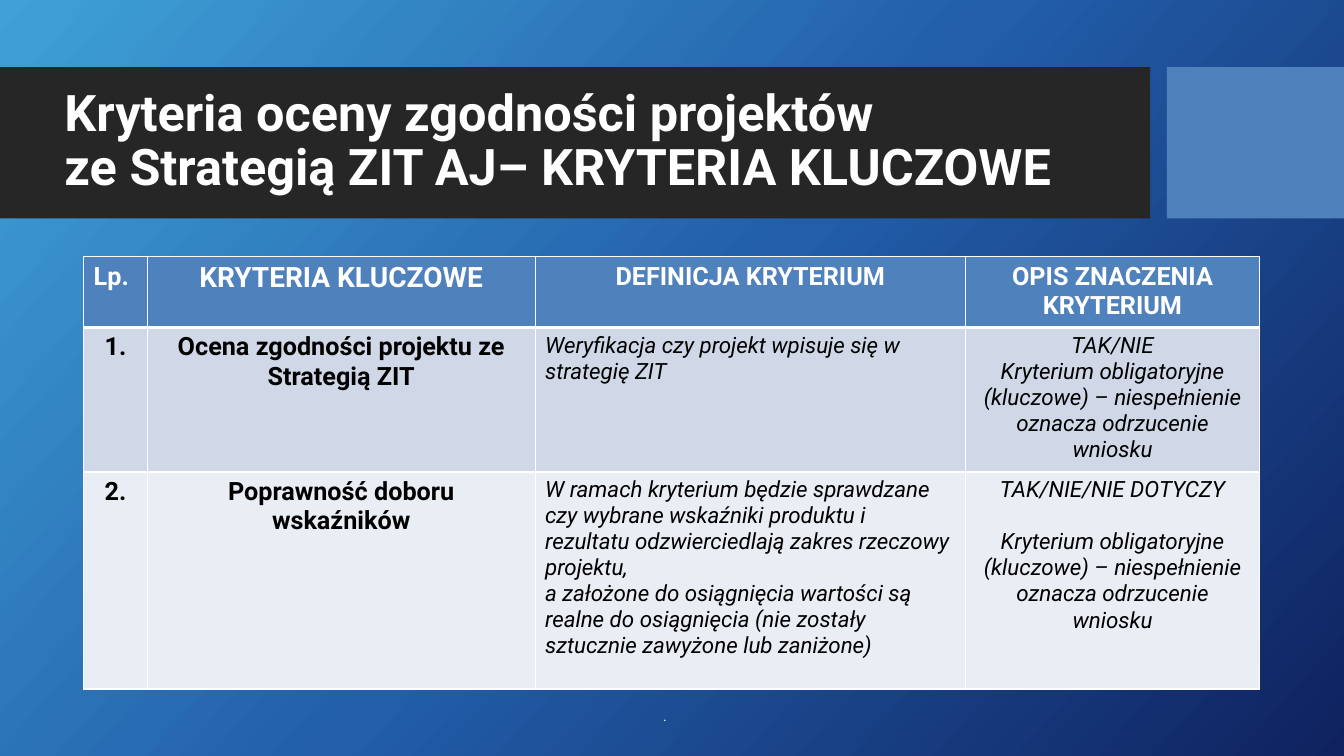
from copy import deepcopy
from dataclasses import dataclass

from lxml.etree import SubElement
from pptx import Presentation
from pptx.dml.color import RGBColor as RGB
from pptx.enum.shapes import MSO_SHAPE as SHAPE
from pptx.enum.text import MSO_ANCHOR as ANCHOR, PP_ALIGN as ALIGN
from pptx.oxml.ns import qn
from pptx.util import Pt


@dataclass(frozen=True)
class Theme:
    font: str = "Roboto"
    white: str = "FFFFFF"
    black: str = "000000"
    dark: str = "262626"
    accent: str = "4F81BD"
    bands: tuple = ("D0D8E8", "E9EDF4")
    gradient: tuple = ((0, "3FA1D7"), (0.5, "225EA9"), (1, "0F225F"))
    gradient_angle: int = 318
    title: int = 36
    lead: int = 20
    label: int = 18
    body: int = 16
    note: int = 10


@dataclass(frozen=True)
class Para:
    text: str
    size: int
    color: str
    bold: bool = False
    italic: bool = False
    align: ALIGN = ALIGN.CENTER
    before: float = 0
    spacing: float = 1.0


class Deck:
    def __init__(self, theme, width, height):
        self.theme = theme
        self.prs = Presentation()
        self.prs.slide_width, self.prs.slide_height = Pt(width), Pt(height)
        self.s = self.prs.slides.add_slide(self.prs.slide_layouts[6])

    def background(self):
        fill = self.s.background.fill
        fill.gradient()
        fill.gradient_angle = self.theme.gradient_angle
        stops = self.s.element.find(".//" + qn("a:gsLst"))
        stops.append(deepcopy(stops[-1]))
        for stop, (position, color) in zip(fill.gradient_stops, self.theme.gradient):
            stop.position = position
            stop.color.rgb = RGB.from_string(color)

    def block(self, x, y, w, h, color):
        sp = self.s.shapes.add_shape(SHAPE.RECTANGLE, Pt(x), Pt(y), Pt(w), Pt(h))
        sp.shadow.inherit = False
        sp.fill.solid()
        sp.fill.fore_color.rgb = RGB.from_string(color)
        sp.line.fill.background()

    def add_paras(self, tf, paras):
        """Fill a text frame; a newline inside a paragraph is a line break."""
        for i, para in enumerate(paras):
            p = tf.add_paragraph() if i else tf.paragraphs[0]
            p.alignment = para.align
            p.line_spacing = para.spacing
            if para.before:
                p.space_before = Pt(para.before)
            for j, line in enumerate(para.text.split("\n")):
                if j:
                    p.add_line_break()
                r = p.add_run()
                r.text = line
                r.font.name, r.font.size = self.theme.font, Pt(para.size)
                r.font.bold, r.font.italic = para.bold, para.italic
                r.font.color.rgb = RGB.from_string(para.color)

    def text(self, x, y, w, h, para, anchor=ANCHOR.TOP):
        tf = self.s.shapes.add_textbox(Pt(x), Pt(y), Pt(w), Pt(h)).text_frame
        tf.word_wrap = True
        tf.vertical_anchor = anchor
        self.add_paras(tf, [para])

    def border(self, cell, side, width):
        ln = SubElement(cell._tc.get_or_add_tcPr(), qn(f"a:ln{side}"), w=str(Pt(width)))
        fill = SubElement(ln, qn("a:solidFill"))
        SubElement(fill, qn("a:srgbClr"), val=self.theme.white)

    def table(self, x, y, widths, heights, rows):
        """Draw rows of paragraph lists, with a thick rule under the header."""
        frame = self.s.shapes.add_table(
            len(rows), len(widths), Pt(x), Pt(y), Pt(sum(widths)), Pt(sum(heights)))
        table = frame.table
        for column, width in zip(table.columns, widths):
            column.width = Pt(width)
        for i, (height, row) in enumerate(zip(heights, rows)):
            table.rows[i].height = Pt(height)
            color = self.theme.bands[(i - 1) % 2] if i else self.theme.accent
            for j, paras in enumerate(row):
                cell = table.cell(i, j)
                top, bottom = (3 if i == 1 else 1), (3 if i == 0 else 1)
                for side, width in zip("LRTB", (1, 1, top, bottom)):
                    self.border(cell, side, width)
                cell.fill.solid()
                cell.fill.fore_color.rgb = RGB.from_string(color)
                self.add_paras(cell.text_frame, paras)


def main():
    t = Theme()
    deck = Deck(t, 960, 540)
    deck.background()
    deck.block(0, 48, 821.5, 108, t.dark)
    deck.block(833.5, 48, 126.5, 108, t.accent)
    title = "Kryteria oceny zgodności projektów\nze Strategią ZIT AJ– KRYTERIA KLUCZOWE"
    deck.text(39, 59, 772, 85,
              Para(title, t.title, t.white, bold=True, align=ALIGN.LEFT, spacing=0.9),
              ANCHOR.MIDDLE)

    def head(text, size=t.label, align=ALIGN.CENTER):
        return [Para(text, size, t.white, bold=True, align=align)]

    def criterion(number, name, definition, answer, gap=0):
        meaning = ("Kryterium obligatoryjne (kluczowe) – niespełnienie "
                   "oznacza odrzucenie wniosku")
        return [
            [Para(number, t.label, t.black, bold=True)],
            [Para(name, t.label, t.black, bold=True)],
            [Para(definition, t.body, t.black, italic=True, align=ALIGN.LEFT)],
            [Para(answer, t.body, t.black, italic=True),
             Para(meaning, t.body, t.black, italic=True, before=gap)],
        ]

    deck.table(59.75, 183.5, (45.5, 277, 307.5, 210), (47, 96, 155), [
        [head("Lp.", align=ALIGN.LEFT), head("KRYTERIA KLUCZOWE", t.lead),
         head("DEFINICJA KRYTERIUM"), head("OPIS ZNACZENIA KRYTERIUM")],
        criterion("1.", "Ocena zgodności projektu ze Strategią ZIT",
                  "Weryfikacja czy projekt wpisuje się w strategię ZIT", "TAK/NIE"),
        criterion("2.", "Poprawność doboru wskaźników",
                  "W ramach kryterium będzie sprawdzane czy wybrane wskaźniki produktu "
                  "i rezultatu odzwierciedlają zakres rzeczowy projektu,\n"
                  "a założone do osiągnięcia wartości są realne do osiągnięcia "
                  "(nie zostały sztucznie zawyżone lub zaniżone)",
                  "TAK/NIE/NIE DOTYCZY", gap=18.75),
    ])
    deck.text(54, 502, 842, 19.5, Para(".", t.note, t.white))
    deck.prs.save("out.pptx")


if __name__ == "__main__":
    main()
